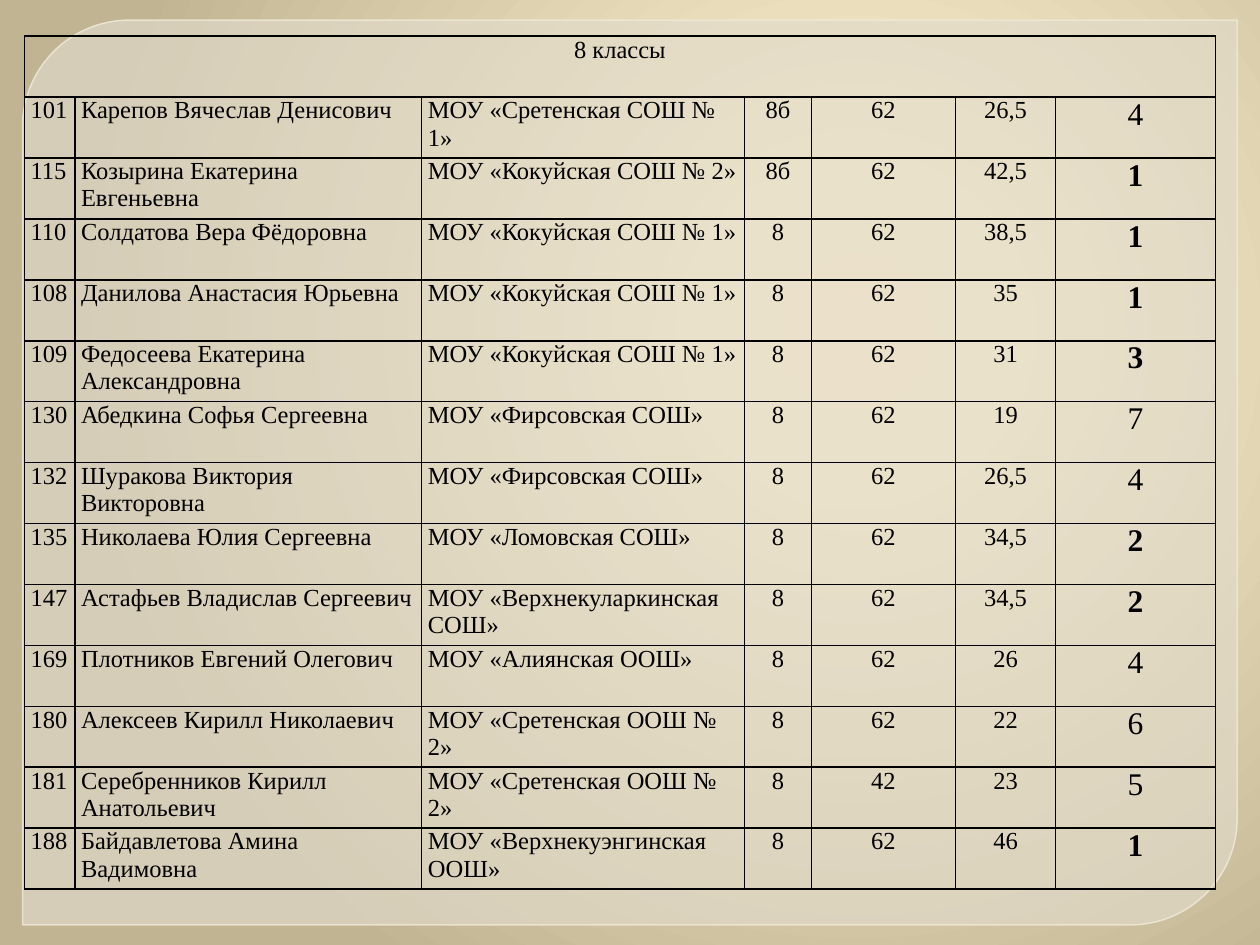
from pptx import Presentation
from pptx.dml.color import RGBColor
from pptx.enum.shapes import MSO_SHAPE
from pptx.enum.text import PP_ALIGN
from pptx.oxml import parse_xml
from pptx.oxml.ns import nsdecls
from pptx.util import Pt

BLACK = RGBColor(0x00, 0x00, 0x00)
PANEL_FILL = RGBColor(0xE1, 0xDB, 0xCB)
PANEL_LINE = RGBColor(0xEF, 0xE8, 0xD7)
GLOW_STOPS = [
    (0, RGBColor(0xFE, 0xEF, 0xCB)),
    (20, RGBColor(0xFA, 0xED, 0xCA)),
    (100, RGBColor(0xC1, 0xB4, 0x93)),
]

TITLE = "8 классы"
COLUMN_WIDTHS = [28.8, 198.2, 184.5, 38.2, 82.4, 57.1, 91.4]
ROW_HEIGHT = 34.83
CENTERED_FROM = 3
LAST_PRIZE = 3
RESULTS = [
    ("101", "Карепов Вячеслав Денисович", "Сретенская СОШ № 1", "8б", "62", "26,5", 4),
    ("115", "Козырина Екатерина Евгеньевна", "Кокуйская СОШ № 2", "8б", "62", "42,5", 1),
    ("110", "Солдатова Вера Фёдоровна", "Кокуйская СОШ № 1", "8", "62", "38,5", 1),
    ("108", "Данилова Анастасия Юрьевна", "Кокуйская СОШ № 1", "8", "62", "35", 1),
    ("109", "Федосеева Екатерина Александровна", "Кокуйская СОШ № 1", "8", "62", "31", 3),
    ("130", "Абедкина Софья Сергеевна", "Фирсовская СОШ", "8", "62", "19", 7),
    ("132", "Шуракова Виктория Викторовна", "Фирсовская СОШ", "8", "62", "26,5", 4),
    ("135", "Николаева Юлия Сергеевна", "Ломовская СОШ", "8", "62", "34,5", 2),
    ("147", "Астафьев Владислав Сергеевич", "Верхнекуларкинская СОШ", "8", "62", "34,5", 2),
    ("169", "Плотников Евгений Олегович", "Алиянская ООШ", "8", "62", "26", 4),
    ("180", "Алексеев Кирилл Николаевич", "Сретенская ООШ № 2", "8", "62", "22", 6),
    ("181", "Серебренников Кирилл Анатольевич", "Сретенская ООШ № 2", "8", "42", "23", 5),
    ("188", "Байдавлетова Амина Вадимовна", "Верхнекуэнгинская ООШ", "8", "62", "46", 1),
]


class SlideBuilder:
    font_name = "Times New Roman"
    text_size = 14
    place_size = 18
    side_margin = 3.5
    border_width = 1

    def __init__(self, slide):
        self.slide = slide

    def background(self, stops, left, top):
        """Radial gradient whose centre lies at left, top (percent of the slide)."""
        self.slide.background.fill.solid()
        solid = self.slide.element.xpath(".//p:bgPr/a:solidFill")[0]
        stop_xml = "".join(
            f'<a:gs pos="{position * 1000}"><a:srgbClr val="{color}"/></a:gs>'
            for position, color in stops
        )
        gradient = parse_xml(
            f'<a:gradFill {nsdecls("a")} rotWithShape="1"><a:gsLst>{stop_xml}</a:gsLst>'
            f'<a:path path="circle"><a:fillToRect l="{left * 1000}" t="{top * 1000}" '
            f'r="{(100 - left) * 1000}" b="{(100 - top) * 1000}"/></a:path></a:gradFill>'
        )
        solid.getparent().replace(solid, gradient)

    def panel(self, left, top, width, height):
        shape = self.slide.shapes.add_shape(
            MSO_SHAPE.ROUND_2_DIAG_RECTANGLE, Pt(left), Pt(top), Pt(width), Pt(height)
        )
        shape.shadow.inherit = False
        shape.adjustments[0] = 0.118
        shape.adjustments[1] = 0
        shape.fill.solid()
        shape.fill.fore_color.rgb = PANEL_FILL
        shape.line.color.rgb = PANEL_LINE
        shape.line.width = Pt(0.87)
        for part, percent in (("a:solidFill", 65), ("a:ln/a:solidFill", 88)):
            color = shape.element.spPr.xpath(f"{part}/a:srgbClr")[0]
            color.append(parse_xml(f'<a:alpha {nsdecls("a")} val="{percent * 1000}"/>'))

    def cell_frame(self, cell):
        cell.margin_left = cell.margin_right = Pt(self.side_margin)
        cell.margin_top = cell.margin_bottom = 0
        cell.fill.background()
        properties = cell._tc.get_or_add_tcPr()
        for index, side in enumerate(("lnL", "lnR", "lnT", "lnB")):
            properties.insert(index, parse_xml(
                f'<a:{side} {nsdecls("a")} w="{Pt(self.border_width)}">'
                f'<a:solidFill><a:srgbClr val="{BLACK}"/></a:solidFill></a:{side}>'
            ))

    def cell_text(self, cell, text, centered, size, bold=False):
        paragraph = cell.text_frame.paragraphs[0]
        paragraph.text = text
        paragraph.alignment = PP_ALIGN.CENTER if centered else PP_ALIGN.LEFT
        paragraph.font.name = self.font_name
        paragraph.font.size = Pt(size)
        paragraph.font.bold = bold
        paragraph.font.color.rgb = BLACK

    def results_table(self, left, top, title, results):
        row_count = len(results) + 1
        table = self.slide.shapes.add_table(
            row_count, len(COLUMN_WIDTHS), Pt(left), Pt(top),
            Pt(sum(COLUMN_WIDTHS)), Pt(ROW_HEIGHT * row_count),
        ).table
        table.first_row = table.horz_banding = False
        for column, width in zip(table.columns, COLUMN_WIDTHS):
            column.width = Pt(width)
        for row in table.rows:
            row.height = Pt(ROW_HEIGHT)
        for cell in table.iter_cells():
            self.cell_frame(cell)

        table.cell(0, 0).merge(table.cell(0, len(COLUMN_WIDTHS) - 1))
        self.cell_text(table.cell(0, 0), title, True, self.text_size)
        for row, (number, name, school, *scores, place) in enumerate(results, start=1):
            for column, text in enumerate((number, name, f"МОУ «{school}»", *scores)):
                self.cell_text(
                    table.cell(row, column), text, column >= CENTERED_FROM, self.text_size
                )
            self.cell_text(
                table.cell(row, len(COLUMN_WIDTHS) - 1), str(place), True,
                self.place_size, place <= LAST_PRIZE,
            )


def main():
    presentation = Presentation()
    presentation.slide_width, presentation.slide_height = Pt(720), Pt(540)
    builder = SlideBuilder(presentation.slides.add_slide(presentation.slide_layouts[6]))
    builder.background(GLOW_STOPS, left=68, top=35)
    builder.panel(12.9, 11.5, 694.1, 517)
    builder.results_table(14, 20.7, TITLE, RESULTS)
    presentation.save("out.pptx")


if __name__ == "__main__":
    main()
